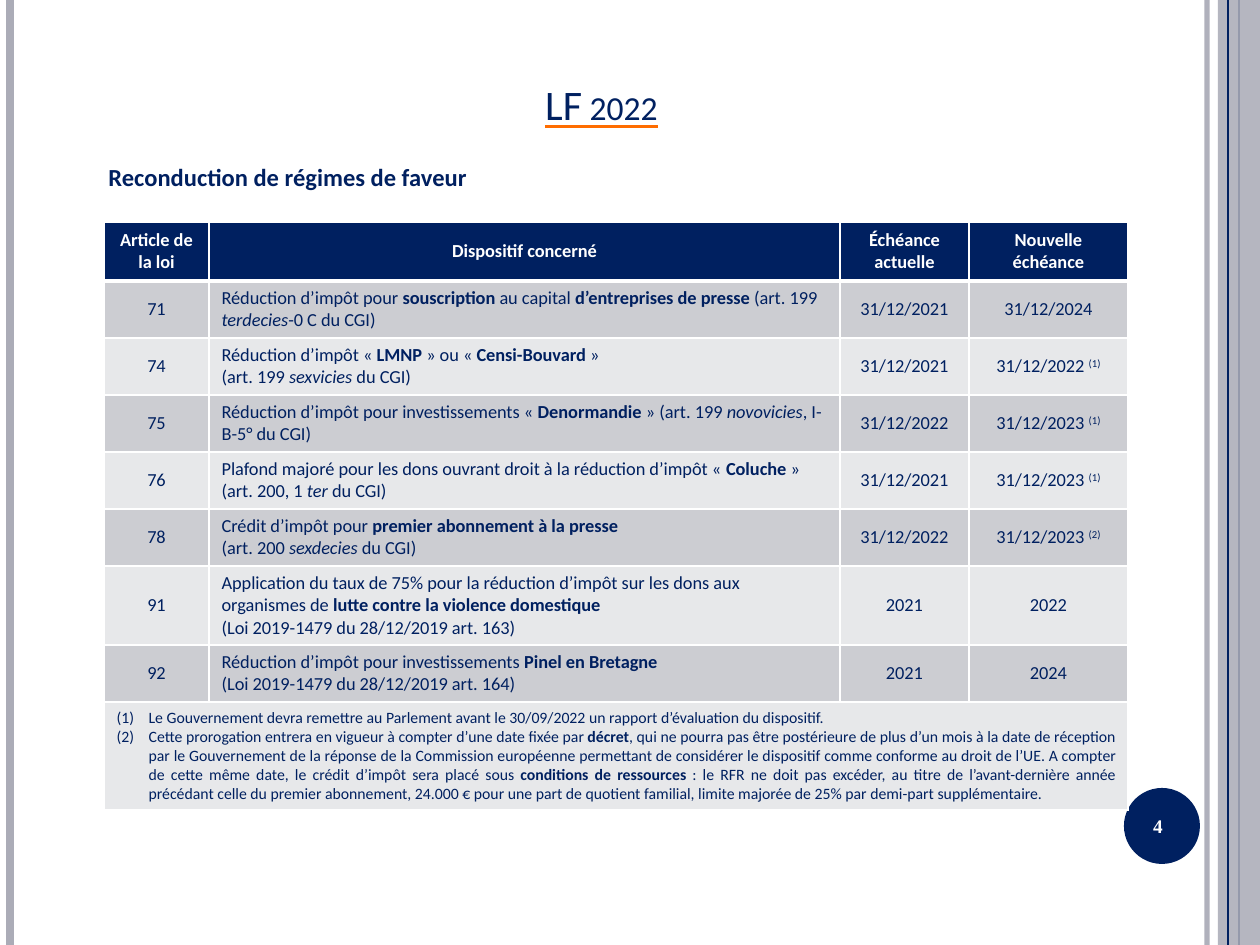
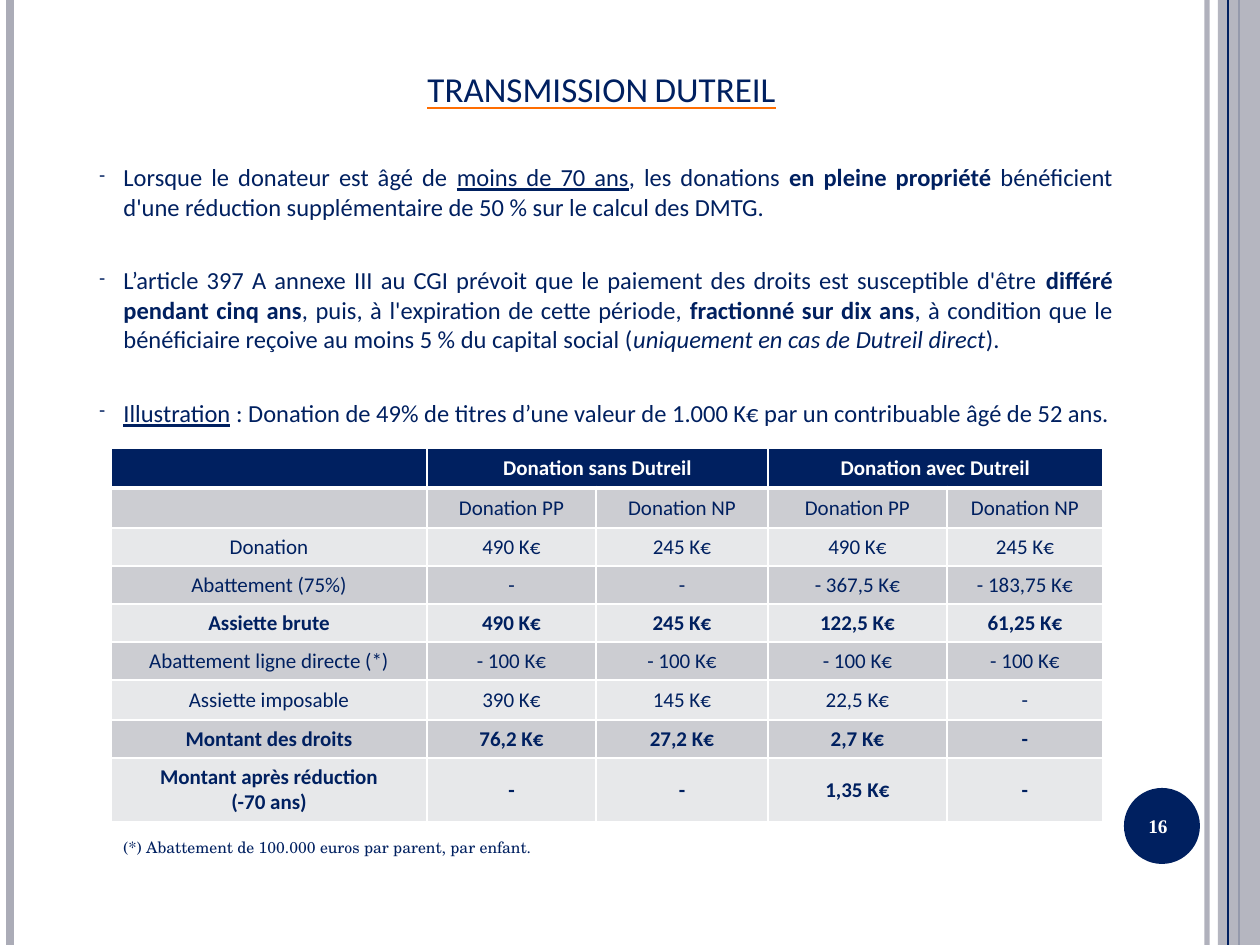
from lxml import etree
from pptx import Presentation
from pptx.dml.color import RGBColor
from pptx.enum.shapes import MSO_CONNECTOR, MSO_SHAPE
from pptx.enum.text import MSO_ANCHOR, MSO_AUTO_SIZE, PP_ALIGN
from pptx.oxml.ns import qn
from pptx.util import Emu, Pt

LINE, RECT, OVAL = MSO_CONNECTOR.STRAIGHT, MSO_SHAPE.RECTANGLE, MSO_SHAPE.OVAL
LEFT, MID, JUST = PP_ALIGN.LEFT, PP_ALIGN.CENTER, PP_ALIGN.JUSTIFY
TOP, CENTRE, BASE = MSO_ANCHOR.TOP, MSO_ANCHOR.MIDDLE, MSO_ANCHOR.BOTTOM

SCALE = 914400 / 126
WIDE, HIGH = 1260, 945
NAVY, GREY, WHITE, ORANGE = "002060", "ABACB7", "FFFFFF", "FF6D00"
DARK, PALE = "CCCDD2", "E7E8EA"
SANS = "Calibri"
# Inline marks: # bold, _ italic, ~ underline, ^ superscript
MARKS = {"#": "bold", "_": "italic", "~": "underline"}

REGIMES = [
    ["#Article de la loi", "#Dispositif concerné", "#Échéance actuelle",
     "#Nouvelle échéance"],
    ["71", "Réduction d’impôt pour #souscription# au capital "
     "#d’entreprises de presse #(art. 199 _terdecies_-0 C du CGI)",
     "31/12/2021", "31/12/2024"],
    ["74", "Réduction d’impôt « #LMNP# » ou « #Censi-Bouvard# »\n"
     "(art. 199 _sexvicies_ du CGI)", "31/12/2021", "31/12/2022 ^(1)"],
    ["75", "Réduction d’impôt pour investissements « #Denormandie# » "
     "(art. 199 _novovicies_, I-B-5° du CGI)",
     "31/12/2022", "31/12/2023 ^(1)"],
    ["76", "Plafond majoré pour les dons ouvrant droit à la réduction "
     "d’impôt « #Coluche #» (art. 200, 1 _ter_ du CGI)",
     "31/12/2021", "31/12/2023 ^(1)"],
    ["78", "Crédit d’impôt pour #premier abonnement à la presse#\n"
     "(art. 200 _sexdecies_ du CGI)", "31/12/2022", "31/12/2023 ^(2)"],
    ["91", "Application du taux de 75% pour la réduction d’impôt sur les "
     "dons aux organismes de #lutte contre la violence domestique#\n"
     "(Loi 2019-1479 du 28/12/2019 art. 163)", "2021", "2022"],
    ["92", "Réduction d’impôt pour investissements #Pinel en Bretagne#\n"
     "(Loi 2019-1479 du 28/12/2019 art. 164)", "2021", "2024"],
    ["", "", "", ""],
]
NOTES = (
    "Le Gouvernement devra remettre au Parlement avant le 30/09/2022 un "
    "rapport d’évaluation du dispositif.\n"
    "Cette prorogation entrera en vigueur à compter d’une date fixée par "
    "#décret#, qui ne pourra pas être postérieure de plus d’un mois à la "
    "date de réception par le Gouvernement de la réponse de la Commission "
    "européenne permettant de considérer le dispositif comme conforme au "
    "droit de l’UE. A compter de cette même date, le crédit d’impôt sera "
    "placé sous #conditions de ressources #: le RFR ne doit pas excéder, au "
    "titre de l’avant-dernière année précédant celle du premier abonnement, "
    "24.000 € pour une part de quotient familial, limite majorée de 25% par "
    "demi-part supplémentaire.")
POINTS = (
    "Lorsque le donateur est âgé de ~moins de 70 ans~, les donations #en "
    "pleine propriété# bénéficient d'une réduction supplémentaire de 50 % "
    "sur le calcul des DMTG.\n"
    "L’article 397 A annexe III au CGI prévoit que le paiement des droits "
    "est susceptible d'être #différé pendant cinq ans#, puis, à "
    "l'expiration de cette période, #fractionné sur dix ans#, à condition "
    "que le bénéficiaire reçoive au moins 5 % du capital social "
    "(_uniquement en cas de Dutreil direct_).\n"
    "~Illustration~ : Donation de 49% de titres d’une valeur de 1.000 K€ "
    "par un contribuable âgé de 52 ans.")
DUTIES = [
    ["", "#Donation sans Dutreil", "", "#Donation avec Dutreil", ""],
    ["", "Donation PP", "Donation NP", "Donation PP", "Donation NP"],
    ["Donation", "490 K€", "245 K€", "490 K€", "245 K€"],
    ["Abattement (75%)", "-", "-", "- 367,5 K€", "- 183,75 K€"],
    ["#Assiette brute", "#490 K€", "#245 K€", "#122,5 K€", "#61,25 K€"],
    ["Abattement ligne directe (*)"] + ["- 100 K€"] * 4,
    ["Assiette imposable", "390 K€", "145 K€", "22,5 K€", "-"],
    ["#Montant des droits", "#76,2 K€", "#27,2 K€", "#2,7 K€", "#-"],
    ["#Montant après réduction\n#(-70 ans)", "#-", "#-", "#1,35 K€", "#-"],
]


def px(num):
    return Emu(round(num * SCALE))


def box(*nums):
    return [px(num) for num in nums]


def rgb(text):
    return RGBColor.from_string(text)


def put(item, **vals):
    for name, val in vals.items():
        setattr(item, name, val)


def add(parent, tag, **vals):
    node = etree.SubElement(parent, qn(tag))
    for name, val in vals.items():
        node.set(name, str(val))
    return node


def fade(shape, share):
    """Make the first solid colour of a shape partly clear."""
    tone = shape._element.spPr.find(".//" + qn("a:srgbClr"))
    add(tone, "a:alpha", val=share * 1000)


# Text
def split(text):
    """Yield pieces of marked text with the marks that are on."""
    live, part = set(), ""
    for sign in text:
        if sign in "#_~^":
            if part:
                yield part, live
            live, part = live ^ {sign}, ""
        else:
            part += sign
    if part:
        yield part, live


def write(frame, text, size, tone=NAVY, face=SANS, align=MID, gap=0):
    frame.clear()
    for num, line in enumerate(text.split("\n")):
        par = frame.add_paragraph() if num else frame.paragraphs[0]
        put(par, alignment=align, space_before=Pt(gap if num else 0))
        for part, live in split(line):
            run = par.add_run()
            run.text = part
            put(run.font, size=Pt(size), name=face,
                **{name: mark in live for mark, name in MARKS.items()})
            run.font.color.rgb = rgb(tone)
            if "^" in live:
                run.font._element.set("baseline", "30000")
        if not line:
            add(par._p, "a:endParaRPr", sz=round(size * 100))


def mark(frame, step, dash=False):
    """Hang dashes or bracketed numbers before the paragraphs."""
    for par in frame.paragraphs:
        props = par._p.get_or_add_pPr()
        props.set("marL", str(px(step)))
        props.set("indent", str(-px(step)))
        if dash:
            add(add(props, "a:buClr"), "a:srgbClr", val=NAVY)
            add(props, "a:buSzPct", val=70000)
            add(props, "a:buChar", char="-")
        else:
            add(props, "a:buAutoNum", type="arabicParenBoth")


def label(slide, place, text, size, anchor=TOP, **look):
    frame = slide.shapes.add_textbox(*box(*place)).text_frame
    put(frame, word_wrap=True, vertical_anchor=anchor)
    write(frame, text, size, **look)
    return frame


def head(slide, text, size, high):
    title = slide.shapes.title
    put(title, **dict(zip(("left", "top", "width", "height"),
                          box(87, 53, 1029, high))))
    frame = title.text_frame
    put(frame, word_wrap=True, auto_size=MSO_AUTO_SIZE.NONE,
        vertical_anchor=BASE, margin_bottom=px(3))
    write(frame, "~" + text, size)
    props = frame.paragraphs[0].runs[0].font._element
    props.set("cap", "small")
    under = add(props, "a:uFill")
    add(add(under, "a:solidFill"), "a:srgbClr", val=ORANGE)
    props.find(qn("a:latin")).addprevious(under)


# Shared frame
def rule(slide, left, tone, weight):
    line = slide.shapes.add_connector(LINE, *box(left, 0, left, HIGH))
    line.line.color.rgb = rgb(tone)
    line.line.width = Pt(weight)
    add(line._element.spPr, "a:effectLst")
    return line


def block(slide, kind, place, tone):
    shape = slide.shapes.add_shape(kind, *box(*place))
    shape.shadow.inherit = False
    shape.fill.solid()
    shape.fill.fore_color.rgb = rgb(tone)
    shape.line.fill.background()
    return shape


def start(deck, title, size, high, page):
    """Add a slide with its side bands, title and page number."""
    slide = deck.slides.add_slide(deck.slide_layouts[5])
    fade(rule(slide, 1207, GREY, 3), 93)
    rule(slide, 10, GREY, 4.5)
    rule(slide, 1239, NAVY, 1.5)
    fade(block(slide, RECT, (1218, 0, 42, HIGH), GREY), 87)
    rule(slide, 1228, NAVY, 0.75)
    block(slide, OVAL, (1124, 788, 76, 76), NAVY)
    head(slide, title, size, high)
    label(slide, (1116, 790, 84, 72), f"#{page}", 11, CENTRE,
          tone=WHITE, face="Times New Roman")
    return slide


# Tables
def edge(cell, row):
    props = cell._tc.get_or_add_tcPr()
    thick = {0: "B", 1: "T"}.get(row)
    for side in "LRTB":
        width = Pt(3 if side == thick else 1)
        line = add(props, "a:ln" + side, w=width)
        add(add(line, "a:solidFill"), "a:srgbClr", val=WHITE)


def grid(slide, left, top, cols, rows, data, size, spans, prose=None):
    """Draw a banded table; the column numbered prose is set left."""
    place = box(left, top, sum(cols), sum(rows))
    table = slide.shapes.add_table(len(rows), len(cols), *place).table
    for col, wide in zip(table.columns, cols):
        col.width = px(wide)
    for row, high in zip(table.rows, rows):
        row.height = px(high)
    for row, first, last in spans:
        table.cell(row, first).merge(table.cell(row, last))
    for row, texts in enumerate(data):
        for col, text in enumerate(texts):
            cell = table.cell(row, col)
            edge(cell, row)
            cell.fill.solid()
            band = (DARK if row % 2 else PALE) if row else NAVY
            cell.fill.fore_color.rgb = rgb(band)
            cell.vertical_anchor = CENTRE
            write(cell.text_frame, text, size, NAVY if row else WHITE,
                  align=LEFT if row and col == prose else MID)
    return table


# Slides
def renewals(deck):
    slide = start(deck, "LF 2022", 24, 79, 4)
    label(slide, (96, 156, 1020, 585), "#Reconduction de régimes de faveur",
          14, align=JUST)
    rows = [59] + [57] * 5 + [79, 57, 108]
    table = grid(slide, 104, 222, [105, 631, 129, 159], rows, REGIMES, 10.5,
                 [(8, 0, 3)], prose=1)
    frame = table.cell(8, 0).text_frame
    write(frame, NOTES, 9, align=JUST)
    mark(frame, 32)


def transfer(deck):
    slide = start(deck, "TRANSMISSION DUTREIL", 20, 60, 16)
    frame = label(slide, (87, 156, 1038, 735), POINTS, 14,
                  align=JUST, gap=25.4)
    mark(frame, 24, dash=True)
    rows = [40, 40] + [38] * 4 + [40, 38, 64]
    grid(slide, 111, 448, [316, 169, 172, 179, 156], rows, DUTIES, 12,
         [(0, 1, 2), (0, 3, 4)])
    label(slide, (111, 832, 942, 32),
          "(*) Abattement de 100.000 euros par parent, par enfant.", 9,
          face="TeX Gyre Schola", align=LEFT)


def main():
    deck = Presentation()
    put(deck, slide_width=px(WIDE), slide_height=px(HIGH))
    renewals(deck)
    transfer(deck)
    deck.save("out.pptx")


if __name__ == "__main__":
    main()
